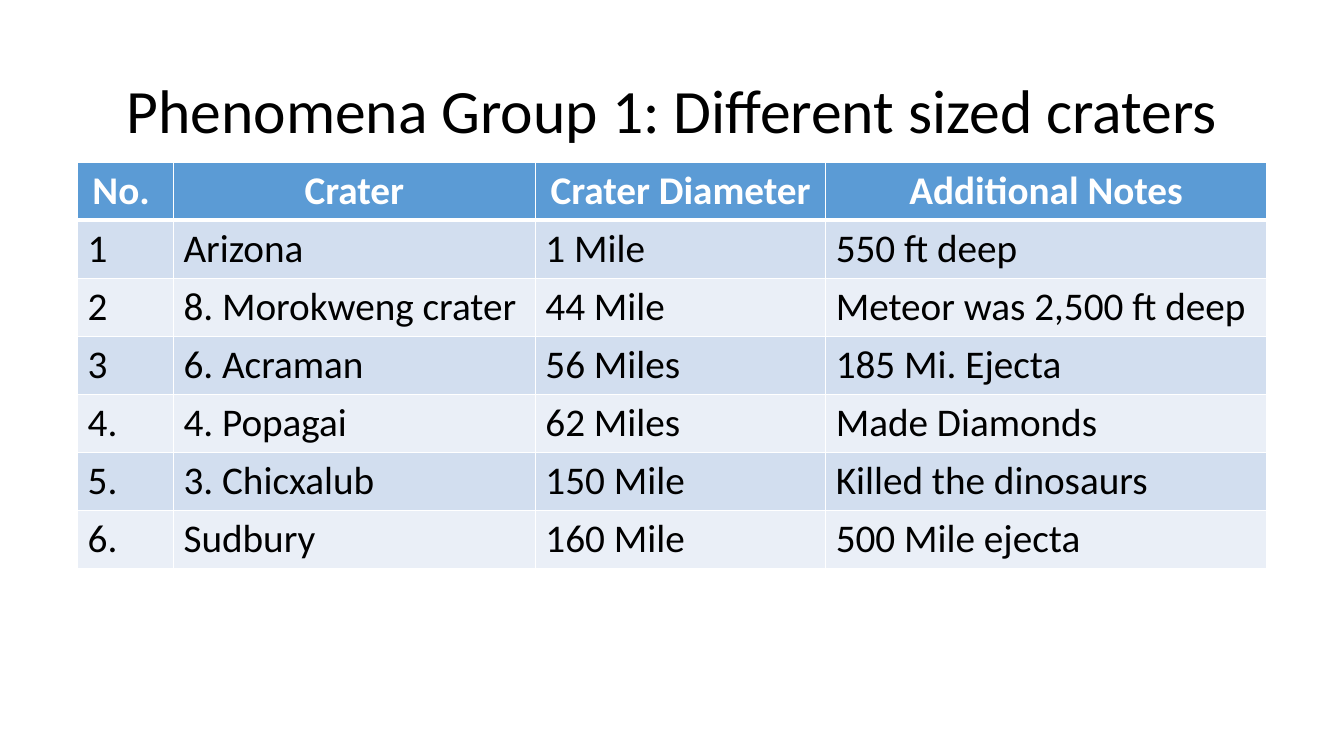
from typing import NamedTuple

from lxml import etree
from pptx import Presentation
from pptx.dml.color import RGBColor
from pptx.enum import text
from pptx.oxml import ns
from pptx.util import Inches, Pt

FONT = "Calibri"
BLACK = RGBColor(0x00, 0x00, 0x00)
WHITE = RGBColor(0xFF, 0xFF, 0xFF)
HEADER_BLUE = RGBColor(0x5B, 0x9B, 0xD5)
BAND_BLUES = (RGBColor(0xEA, 0xEF, 0xF7), RGBColor(0xD2, 0xDE, 0xEF))


class Column(NamedTuple):
    heading: str
    width: float


class Crater(NamedTuple):
    number: str
    name: str
    diameter: str
    notes: str


COLUMNS = [
    Column("No. ", 0.95),
    Column("Crater", 3.59),
    Column("Crater Diameter", 2.88),
    Column("Additional Notes", 4.37),
]
CRATERS = [
    Crater("1", "Arizona", "1 Mile", "550 ft deep"),
    Crater("2", "8. Morokweng crater", "44 Mile", "Meteor was 2,500 ft deep"),
    Crater("3", "6. Acraman", "56 Miles", "185 Mi. Ejecta"),
    Crater("4.", "4. Popagai", "62 Miles", "Made Diamonds"),
    Crater("5.", "3. Chicxalub", "150 Mile", "Killed the dinosaurs"),
    Crater("6.", "Sudbury", "160 Mile", "500 Mile ejecta"),
]


def format_paragraph(paragraph, size: float, color: RGBColor, bold: bool, centred: bool) -> None:
    paragraph.font.name = FONT
    paragraph.font.size = Pt(size)
    paragraph.font.bold = bold
    paragraph.font.color.rgb = color
    paragraph.alignment = text.PP_ALIGN.CENTER if centred else text.PP_ALIGN.LEFT


def set_borders(cell, top: float, bottom: float) -> None:
    """Draw white cell borders; top and bottom are widths in points."""
    properties = cell._tc.get_or_add_tcPr()
    sides = (("a:lnL", 1), ("a:lnR", 1), ("a:lnT", top), ("a:lnB", bottom))
    for index, (tag, width) in enumerate(sides):
        line = etree.Element(ns.qn(tag), w=str(Pt(width)))
        fill = etree.SubElement(line, ns.qn("a:solidFill"))
        etree.SubElement(fill, ns.qn("a:srgbClr"), val=str(WHITE))
        properties.insert(index, line)


def add_title(slide, wording: str) -> None:
    title = slide.shapes.title
    title.left, title.top = Inches(0.92), Inches(0.4)
    title.width, title.height = Inches(11.5), Inches(1.45)
    frame = title.text_frame
    frame.text = wording
    frame.word_wrap = True
    frame.auto_size = text.MSO_AUTO_SIZE.NONE
    frame.vertical_anchor = text.MSO_ANCHOR.MIDDLE
    frame.paragraphs[0].line_spacing = 0.9
    format_paragraph(frame.paragraphs[0], 44, BLACK, bold=False, centred=True)


def add_crater_table(slide) -> None:
    rows = [[column.heading for column in COLUMNS], *CRATERS]
    table = slide.shapes.add_table(
        len(rows), len(COLUMNS), Inches(0.77), Inches(1.61), Inches(11.79), Inches(3.97)
    ).table
    for table_column, column in zip(table.columns, COLUMNS):
        table_column.width = Inches(column.width)
    for row_index, row in enumerate(rows):
        is_header = row_index == 0
        for column_index, wording in enumerate(row):
            cell = table.cell(row_index, column_index)
            cell.text = wording
            cell.fill.solid()
            cell.fill.fore_color.rgb = HEADER_BLUE if is_header else BAND_BLUES[row_index % 2]
            set_borders(cell, top=3 if row_index == 1 else 1, bottom=3 if is_header else 1)
            format_paragraph(
                cell.text_frame.paragraphs[0], 28, WHITE if is_header else BLACK,
                bold=is_header, centred=is_header,
            )


def main() -> None:
    presentation = Presentation()
    presentation.slide_width, presentation.slide_height = Inches(13.33), Inches(7.5)
    slide = presentation.slides.add_slide(presentation.slide_layouts.get_by_name("Title Only"))
    add_title(slide, "Phenomena Group 1: Different sized craters")
    add_crater_table(slide)
    presentation.save("out.pptx")


if __name__ == "__main__":
    main()
